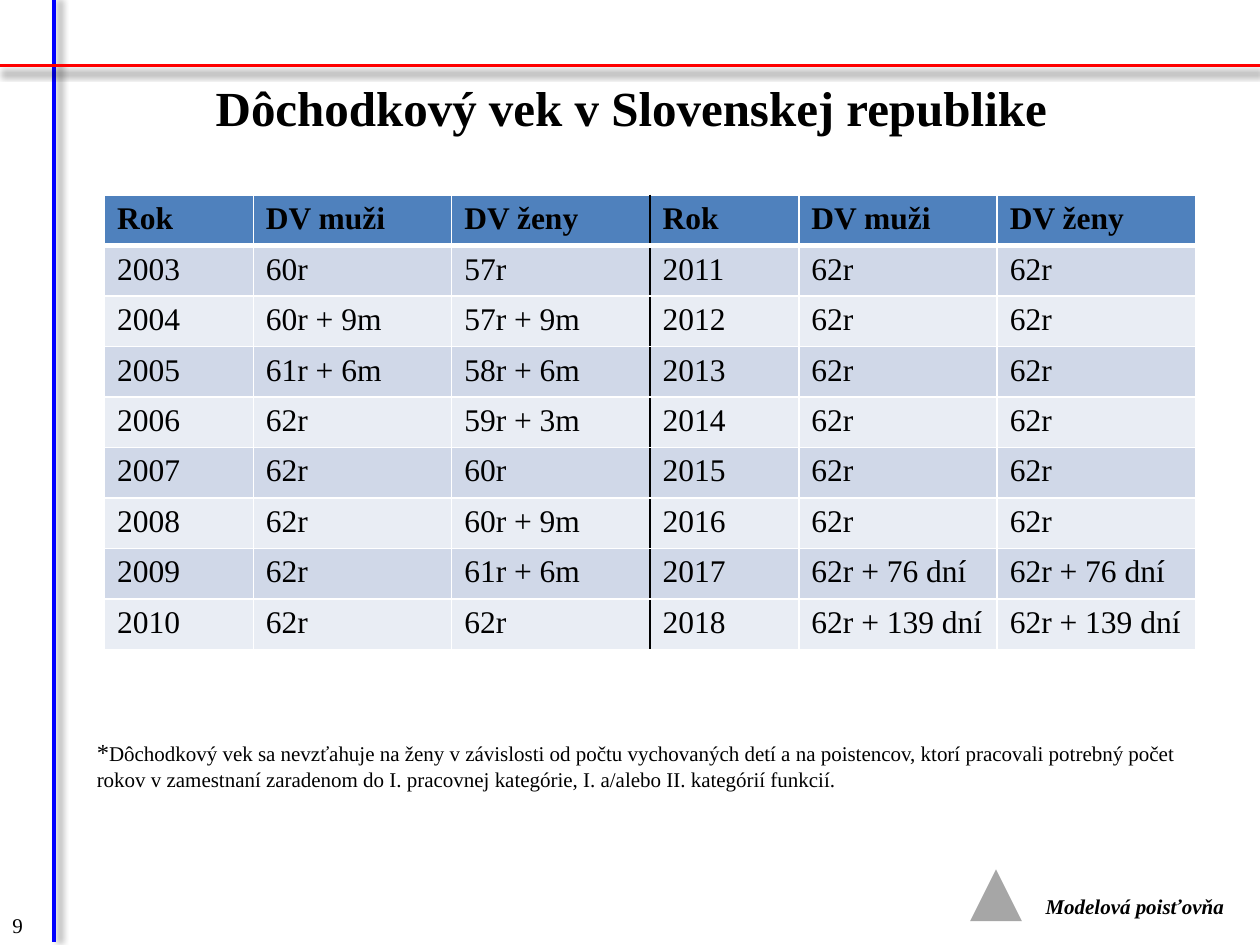
from lxml.etree import SubElement
from pptx import Presentation
from pptx.dml.color import RGBColor
from pptx.enum.shapes import MSO_CONNECTOR, MSO_SHAPE
from pptx.enum.text import MSO_ANCHOR, PP_ALIGN
from pptx.oxml.ns import qn
from pptx.util import Inches, Pt

COLS, ROWS = 100, 75
WIDTH, HEIGHT = Inches(10), Inches(7.5)
FONT = "Times New Roman"
BLACK, WHITE = "000000", "FFFFFF"
HEADER_FILL, BAND_FILLS = "4F81BD", ("D0D8E8", "E9EDF4")
COLUMN_WEIGHTS = (3, 4, 4, 3, 4, 4)
DIVIDER = 3

TITLE = "Dôchodkový vek v Slovenskej republike"
NOTE = (
    "Dôchodkový vek sa nevzťahuje na ženy v závislosti od počtu vychovaných detí "
    "a na poistencov, ktorí pracovali potrebný počet rokov v zamestnaní zaradenom "
    "do I. pracovnej kategórie, I. a/alebo II. kategórií funkcií."
)
HEADINGS = ("Rok", "DV muži", "DV ženy")
AGES = [
    ("2003", "60r", "57r"),
    ("2004", "60r + 9m", "57r + 9m"),
    ("2005", "61r + 6m", "58r + 6m"),
    ("2006", "62r", "59r + 3m"),
    ("2007", "62r", "60r"),
    ("2008", "62r", "60r + 9m"),
    ("2009", "62r", "61r + 6m"),
    ("2010", "62r", "62r"),
    ("2011", "62r", "62r"),
    ("2012", "62r", "62r"),
    ("2013", "62r", "62r"),
    ("2014", "62r", "62r"),
    ("2015", "62r", "62r"),
    ("2016", "62r", "62r"),
    ("2017", "62r + 76 dní", "62r + 76 dní"),
    ("2018", "62r + 139 dní", "62r + 139 dní"),
]


def rgb(value):
    """Turn a hex string into a colour."""
    return RGBColor.from_string(value)


def grid(x, y, w, h):
    """Convert columns and rows of the slide grid to lengths."""
    return (
        round(x * WIDTH / COLS),
        round(y * HEIGHT / ROWS),
        round(w * WIDTH / COLS),
        round(h * HEIGHT / ROWS),
    )


def write(p, text, size=12, color=BLACK, bold=False, italic=False, align=PP_ALIGN.LEFT):
    """Append a formatted run to a paragraph."""
    p.alignment = align
    r = p.add_run()
    r.text = text
    r.font.name, r.font.size = FONT, Pt(size)
    r.font.bold, r.font.italic = bold, italic
    r.font.color.rgb = rgb(color)


def text_box(s, box, anchor=MSO_ANCHOR.TOP):
    """Add a wrapping text box and return its text frame."""
    tf = s.shapes.add_textbox(*grid(*box)).text_frame
    tf.word_wrap = True
    tf.vertical_anchor = anchor
    return tf


def add_rule(s, box, color, distance, angle):
    """Draw a straight rule with a soft shadow."""
    x, y, w, h = grid(*box)
    line = s.shapes.add_connector(MSO_CONNECTOR.STRAIGHT, x, y, x + w, y + h)
    line.line.color.rgb = rgb(color)
    line.line.width = Pt(2)
    effects = SubElement(line._element.spPr, qn("a:effectLst"))
    shadow = SubElement(
        effects, qn("a:outerShdw"), blurRad=str(Pt(4)), dist=str(Pt(distance)),
        dir=str(angle * 60000), algn="ctr", rotWithShape="0",
    )
    tint = SubElement(shadow, qn("a:srgbClr"), val=BLACK)
    SubElement(tint, qn("a:alpha"), val="40000")


def add_title(s, box):
    """Place the centred slide title."""
    tf = text_box(s, box, MSO_ANCHOR.MIDDLE)
    tf.margin_bottom = Inches(0.1)
    write(tf.paragraphs[0], TITLE, size=28, bold=True, align=PP_ALIGN.CENTER)


def set_borders(cell, **sides):
    """Set cell borders from side=(colour, points) in L, R, T, B order."""
    tc_pr = cell._tc.get_or_add_tcPr()
    for side, (color, width) in sides.items():
        ln = SubElement(tc_pr, qn(f"a:ln{side}"), w=str(Pt(width)))
        fill = SubElement(ln, qn("a:solidFill"))
        SubElement(fill, qn("a:srgbClr"), val=color)


def add_age_table(s, box):
    """Build the retirement age table with the years in two halves."""
    half = len(AGES) // 2
    rows = [HEADINGS * 2] + [a + b for a, b in zip(AGES[:half], AGES[half:])]
    x, y, w, h = grid(*box)
    table = s.shapes.add_table(len(rows), len(COLUMN_WEIGHTS), x, y, w, h).table
    for column, weight in zip(table.columns, COLUMN_WEIGHTS):
        column.width = round(w * weight / sum(COLUMN_WEIGHTS))
    for i, values in enumerate(rows):
        table.rows[i].height = round(h / len(rows))
        for j, value in enumerate(values):
            cell = table.cell(i, j)
            set_borders(
                cell,
                L=(BLACK if j == DIVIDER else WHITE, 1),
                R=(BLACK if j == DIVIDER - 1 else WHITE, 1),
                T=(WHITE, 3 if i == 1 else 1),
                B=(WHITE, 3 if i == 0 else 1),
            )
            cell.fill.solid()
            cell.fill.fore_color.rgb = rgb(BAND_FILLS[(i - 1) % 2] if i else HEADER_FILL)
            write(cell.text_frame.paragraphs[0], value, size=18, bold=i == 0)


def add_note(s, box):
    """Place the footnote with its larger asterisk."""
    p = text_box(s, box).paragraphs[0]
    write(p, "*", size=14)
    write(p, NOTE)


def add_brand(s, box):
    """Place a plain emblem and the institution name beside it."""
    x, y, w, h = box
    sp = s.shapes.add_shape(MSO_SHAPE.ISOSCELES_TRIANGLE, *grid(x, y, h, h))
    sp.shadow.inherit = False
    sp.fill.solid()
    sp.fill.fore_color.rgb = rgb("A6A6A6")
    sp.line.fill.background()
    tf = text_box(s, (x + 5, y + 1.4, w - 5, 3))
    write(tf.paragraphs[0], "Modelová poisťovňa", bold=True, italic=True)


def add_page_number(s, box):
    """Place the page number in the bottom corner."""
    write(text_box(s, box, MSO_ANCHOR.MIDDLE).paragraphs[0], "9")


def main():
    """Build and save the slide."""
    prs = Presentation()
    prs.slide_width, prs.slide_height = WIDTH, HEIGHT
    s = prs.slides.add_slide(prs.slide_layouts[6])
    add_rule(s, (4.3, 0, 0, 74.8), "0000FF", 3, 0)
    add_page_number(s, (0, 71.9, 5.1, 3.1))
    add_rule(s, (0, 5.2, COLS, 0), "FF0000", 4, 90)
    add_brand(s, (77, 69, 22.5, 4.1))
    add_title(s, (5.1, 5.2, 90, 7.1))
    add_age_table(s, (8.3, 15.5, 86.6, 36))
    add_note(s, (6.7, 58, 90.6, 8.8))
    prs.save("out.pptx")


if __name__ == "__main__":
    main()
